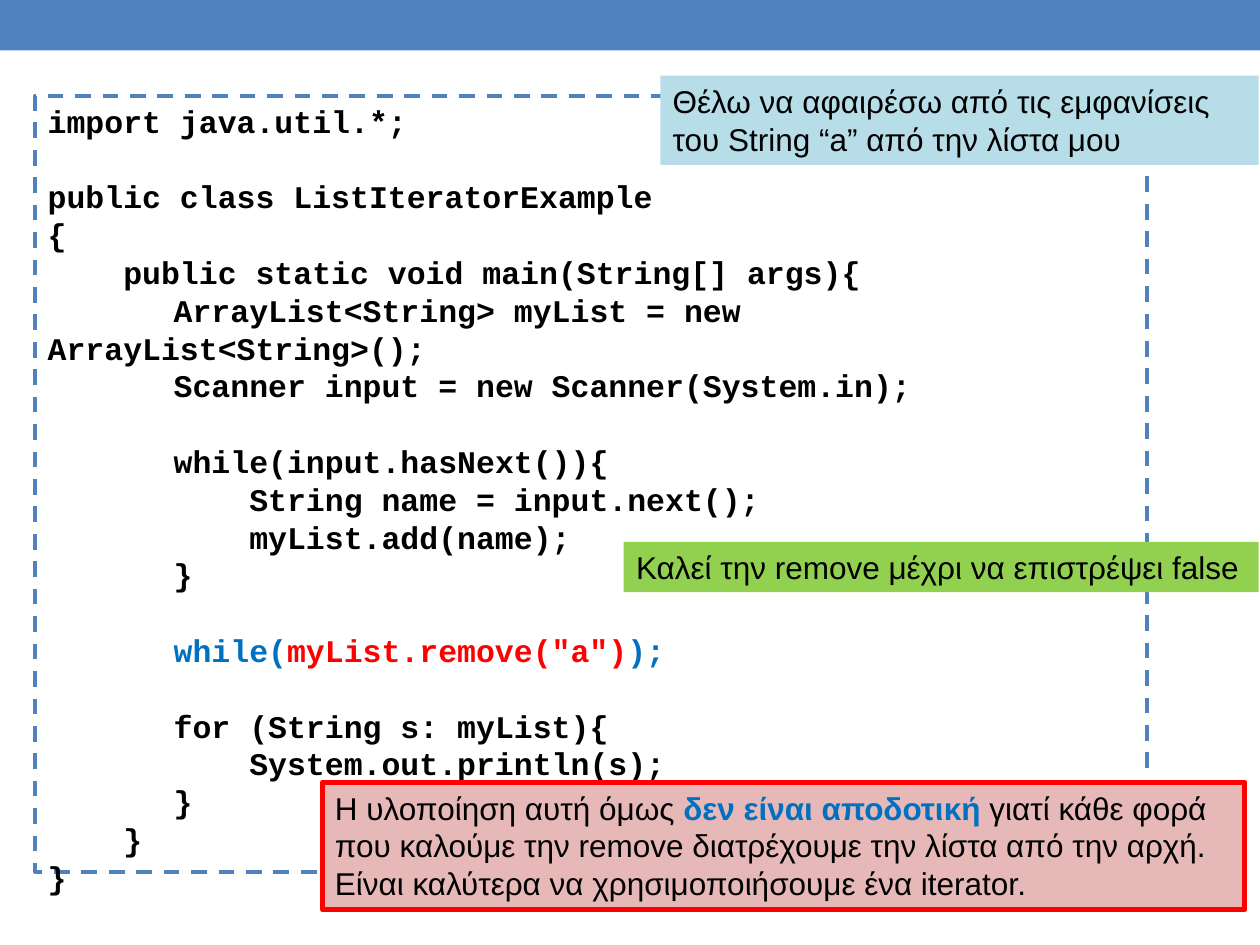
from pptx import Presentation
from pptx.dml.color import RGBColor
from pptx.enum.dml import MSO_LINE
from pptx.enum.shapes import MSO_SHAPE as Preset
from pptx.enum.text import MSO_ANCHOR as Anchor, PP_ALIGN as Align
from pptx.util import Inches, Pt

COLORS = {
    "frame": "4F81BD", "goal": "B7DEE8", "loop": "92D050", "warning": "E6B9B8",
    "text": "000000", "keyword": "0070C0", "alert": "FF0000",
}
BLANK_LAYOUT = 6
BLANK_LINE = 21.6  # points of space in place of an empty code line
SPACE_WIDTH = 0.15  # inches per character of 18 pt Courier New
TAB = 1.0  # inches


class SlideBuilder:
    """Holds the style and the current slide; lengths are shares of its size."""

    def __init__(self, deck, size=18, body_font="Arial", code_font="Courier New"):
        self.width, self.height = deck.slide_width, deck.slide_height
        self.slide = deck.slides.add_slide(deck.slide_layouts[BLANK_LAYOUT])
        self.size, self.body_font, self.code_font = size, body_font, code_font

    def color(self, name):
        return RGBColor.from_string(COLORS[name])

    def panel(self, x, y, w, h, fill=None, line=None, weight=0, dash=None):
        panel = self.slide.shapes.add_shape(
            Preset.RECTANGLE, int(x * self.width), int(y * self.height),
            int(w * self.width), int(h * self.height))
        panel.shadow.inherit = False
        if fill:
            panel.fill.solid()
            panel.fill.fore_color.rgb = self.color(fill)
        else:
            panel.fill.background()
        if line:
            panel.line.color.rgb = self.color(line)
            panel.line.width = Pt(weight)
            panel.line.dash_style = dash
        else:
            panel.line.fill.background()
        frame = panel.text_frame
        frame.word_wrap = True
        frame.vertical_anchor = Anchor.TOP
        return frame

    def paragraph(self, frame, index):
        paragraph = frame.add_paragraph() if index else frame.paragraphs[0]
        paragraph.alignment = Align.LEFT
        return paragraph

    def run(self, paragraph, text, font, color="text", bold=False):
        run = paragraph.add_run()
        run.text = text
        run.font.name, run.font.size, run.font.bold = font, Pt(self.size), bold
        run.font.color.rgb = self.color(color)

    def note(self, paragraphs, *box, **style):
        frame = self.panel(*box, **style)
        for index, runs in enumerate(paragraphs):
            paragraph = self.paragraph(frame, index)
            for text, *look in runs:
                self.run(paragraph, text, self.body_font, *look)

    def code(self, blocks, *box, **style):
        """Each block of (tabs, spaces, runs) lines is set off by a line's gap."""
        frame = self.panel(*box, **style)
        count = 0
        for block in blocks:
            for row, (tabs, spaces, *runs) in enumerate(block):
                paragraph = self.paragraph(frame, count)
                if count and row == 0:
                    paragraph.space_before = Pt(BLANK_LINE)
                # First-line indent only: wrapped code returns to the margin
                properties = paragraph._p.get_or_add_pPr()
                properties.set("marL", "0")
                properties.set("indent", str(Inches(tabs * TAB + spaces * SPACE_WIDTH)))
                for text, *look in runs:
                    self.run(paragraph, text, self.code_font, *(look or ["text"]), bold=True)
                count += 1


LISTING = [
    [(0, 0, ("import java.util.*;",))],
    [(0, 0, ("public class ListIteratorExample",)),
     (0, 0, ("{",)),
     (0, 4, ("public static void main(String[] args){",)),
     (1, 0, ("ArrayList<String> myList = new ArrayList<String>();",)),
     (1, 0, ("Scanner input = new Scanner(System.in);",))],
    [(1, 0, ("while(input.hasNext()){",)),
     (1, 4, ("String name = input.next();",)),
     (1, 4, ("myList.add(name);",)),
     (1, 0, ("}",))],
    [(1, 0, ("while(", "keyword"), ('myList.remove("a")', "alert"), (");", "keyword"))],
    [(1, 0, ("for (String s: myList){",)),
     (1, 4, ("System.out.println(s);",)),
     (1, 0, ("}",)),
     (0, 4, ("}",)),
     (0, 0, ("}",))],
]
GOAL = [[("Θέλω να αφαιρέσω από τις εμφανίσεις του String “a” από την λίστα μου",)]]
LOOP = [[("Καλεί την remove μέχρι να επιστρέψει false",)]]
WARNING = [
    [("H υλοποίηση αυτή όμως ",),
     ("δεν είναι αποδοτική ", "keyword", True),
     ("γιατί κάθε φορά που καλούμε την remove διατρέχουμε την λίστα από την αρχή.",)],
    [("Είναι καλύτερα να χρησιμοποιήσουμε ένα iterator.",)],
]


def main():
    deck = Presentation()
    deck.slide_width, deck.slide_height = Inches(10), Inches(7.5)
    builder = SlideBuilder(deck)

    # Header band
    builder.panel(0, 0, 1, 0.4 / 7.5, fill="frame")

    # Code listing
    builder.code(LISTING, 0.028, 0.76 / 7.5, 0.882, 6.16 / 7.5,
                 line="frame", weight=2.25, dash=MSO_LINE.DASH)

    # Comments on the code
    builder.note(GOAL, 0.524, 0.6 / 7.5, 0.475, 0.71 / 7.5, fill="goal")
    builder.note(LOOP, 0.495, 4.3 / 7.5, 0.504, 0.4 / 7.5, fill="loop")
    builder.note(WARNING, 0.256, 6.21 / 7.5, 0.732, 1.01 / 7.5,
                 fill="warning", line="alert", weight=3)

    deck.save("out.pptx")


if __name__ == "__main__":
    main()
